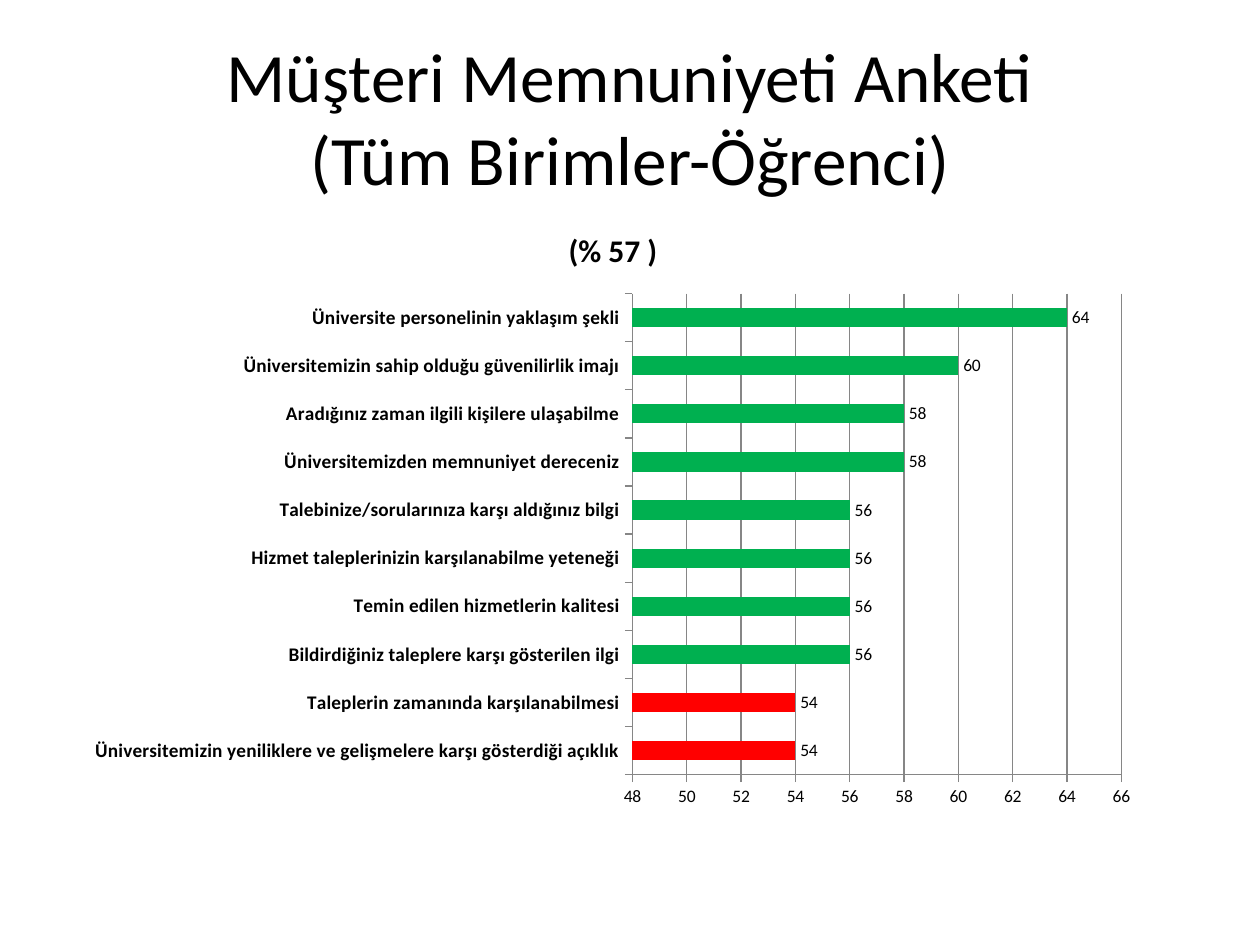
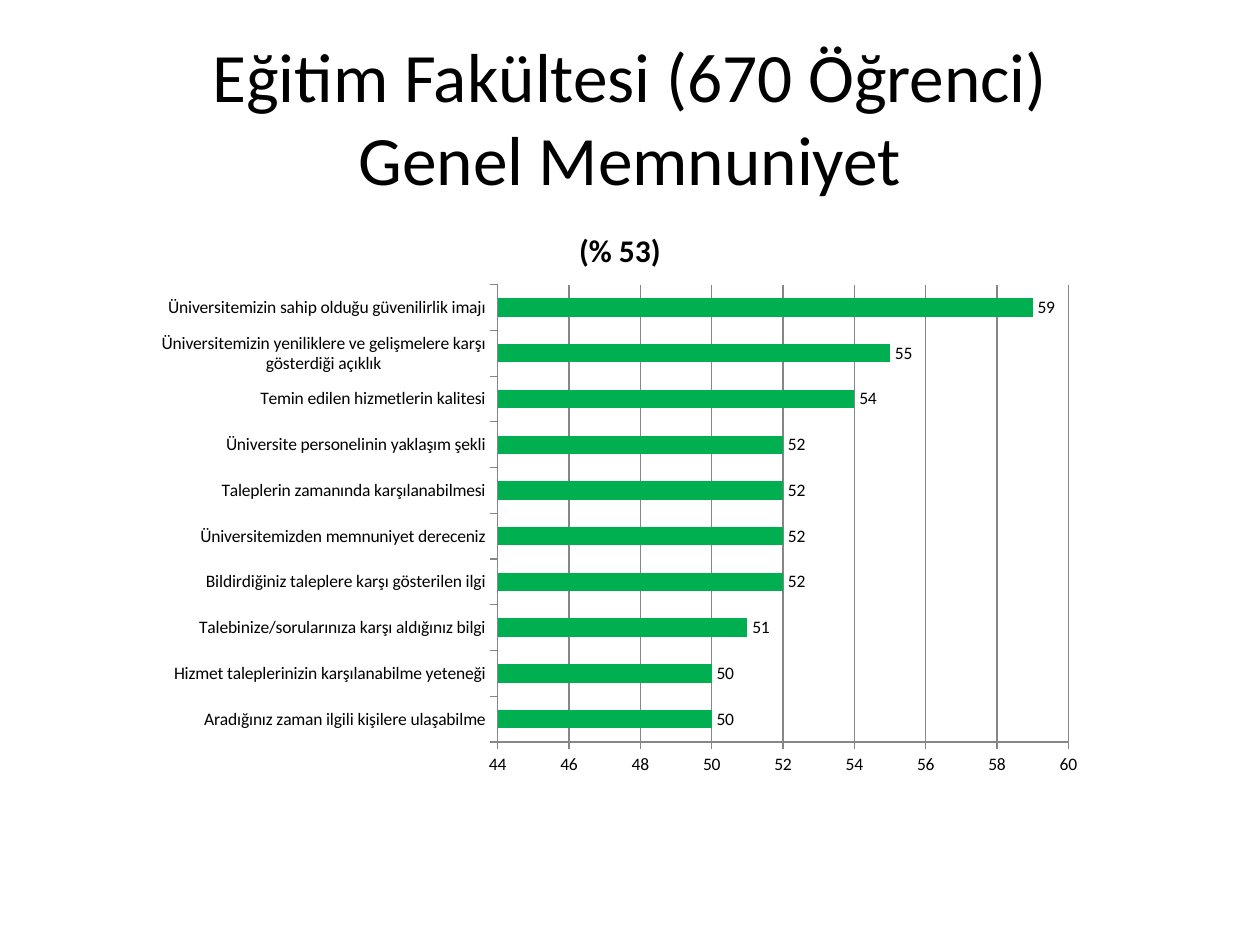
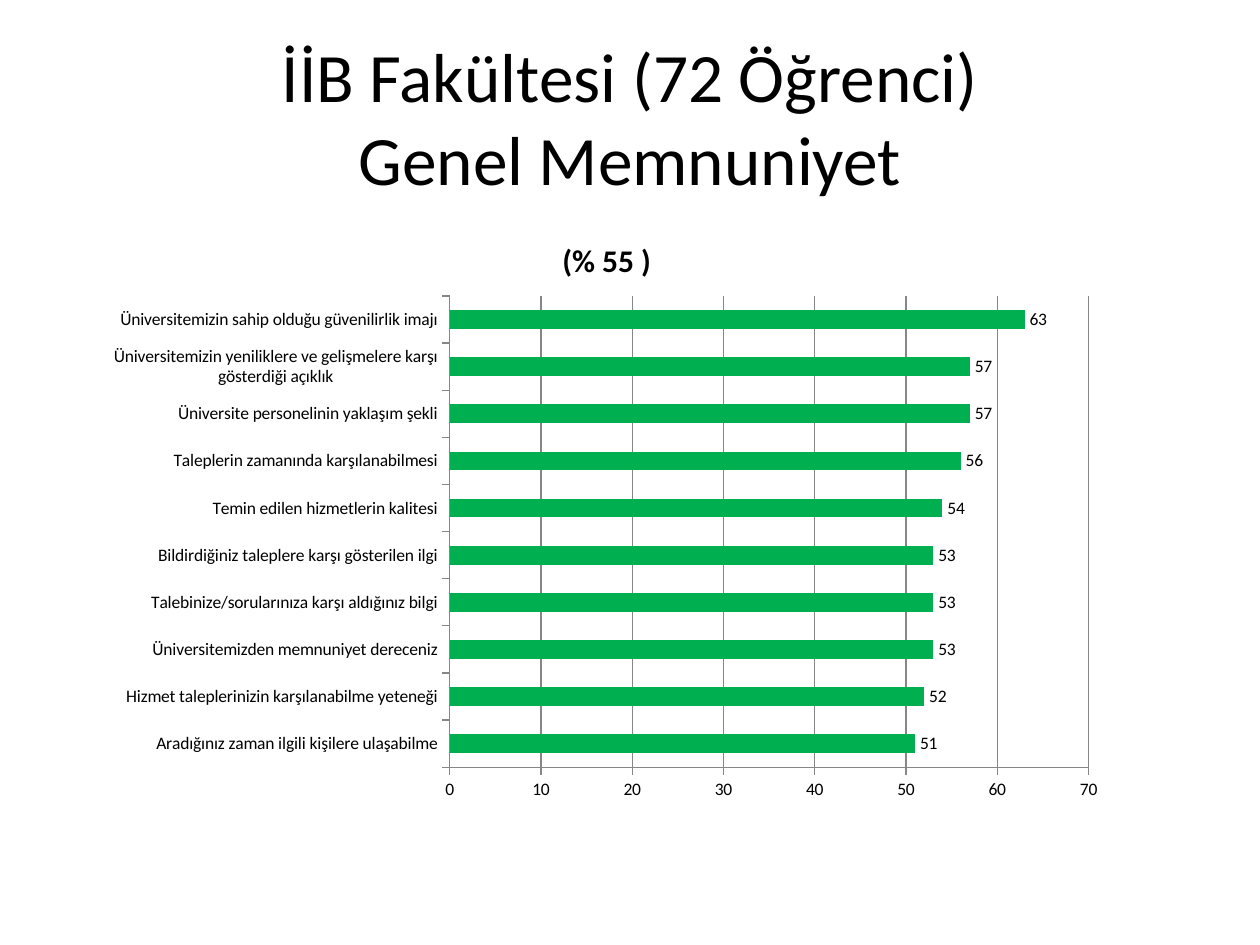
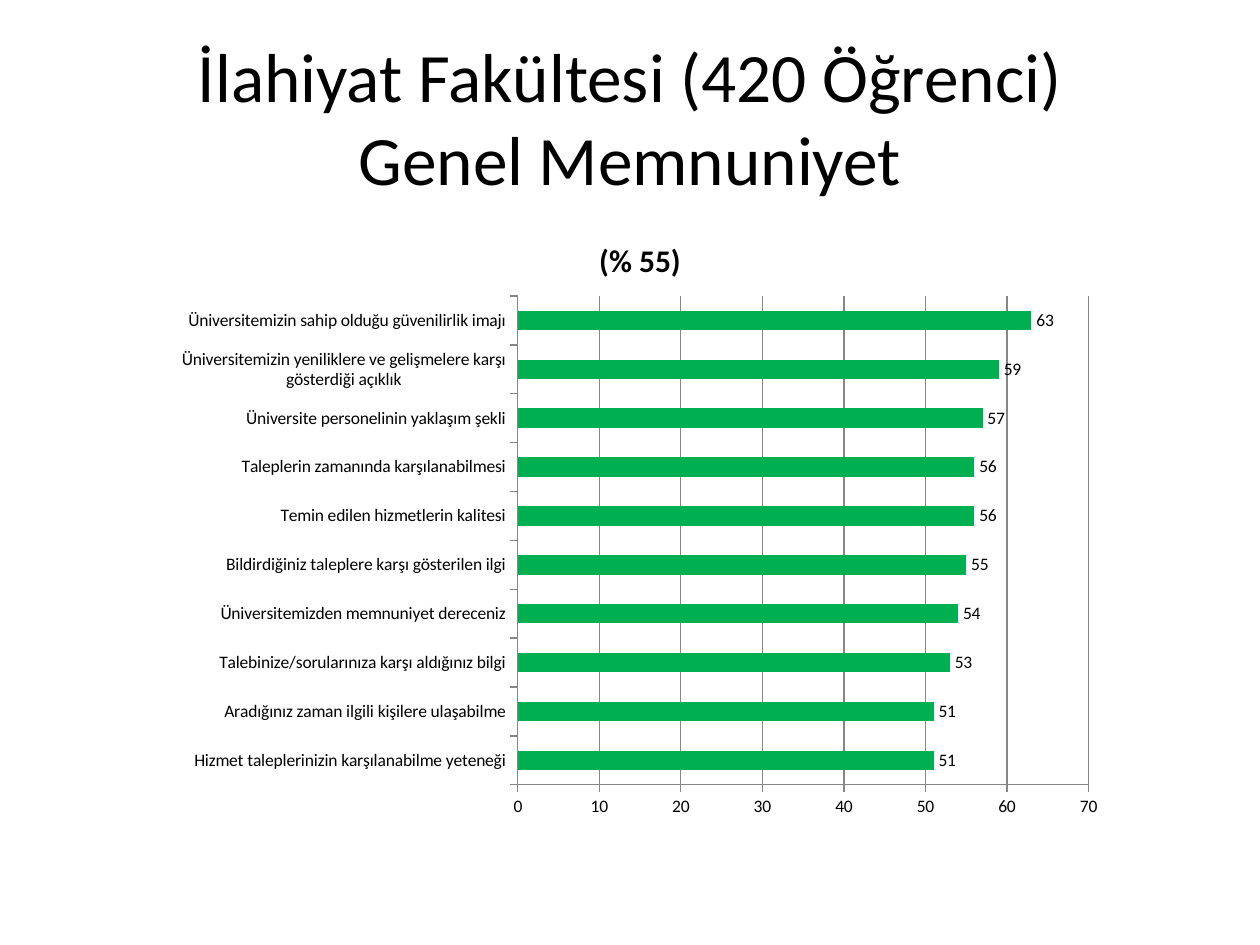
"""Build four slides of student satisfaction survey bar charts."""
from lxml import etree
from pptx import Presentation
from pptx.chart.data import CategoryChartData
from pptx.dml.color import RGBColor
from pptx.enum import chart as ch, text
from pptx.oxml import ns
from pptx.util import Inches, Pt

FONT = "Calibri"
BLACK = RGBColor(0x00, 0x00, 0x00)
GREEN = RGBColor(0x00, 0xB0, 0x50)
RED = RGBColor(0xFF, 0x00, 0x00)
GREY = RGBColor(0x86, 0x86, 0x86)

OPENNESS = "Üniversitemizin yeniliklere ve gelişmelere karşı gösterdiği açıklık"
ON_TIME = "Taleplerin zamanında karşılanabilmesi"
INTEREST = "Bildirdiğiniz taleplere karşı gösterilen ilgi"
QUALITY = "Temin edilen hizmetlerin kalitesi"
ABILITY = "Hizmet taleplerinizin karşılanabilme yeteneği"
INFORMATION = "Talebinize/sorularınıza karşı aldığınız bilgi"
OVERALL = "Üniversitemizden memnuniyet dereceniz"
ACCESS = "Aradığınız zaman ilgili kişilere ulaşabilme"
TRUST = "Üniversitemizin sahip olduğu güvenilirlik imajı"
STAFF = "Üniversite personelinin yaklaşım şekli"

SURVEYS = [
    dict(title=["Müşteri Memnuniyeti Anketi", "(Tüm Birimler-Öğrenci)"], score="(% 57 )",
         frame=(0.59, 1.62, 8.55, 4.88), plot=(5.02, 2.33, 3.88, 3.82), scale=(48, 66, 2),
         cats=[OPENNESS, ON_TIME, INTEREST, QUALITY, ABILITY,
               INFORMATION, OVERALL, ACCESS, TRUST, STAFF],
         vals=[54, 54, 56, 56, 56, 56, 58, 58, 60, 64],
         low_bars=2, cat_size=11, cat_bold=True),
    dict(title=["Eğitim Fakültesi (670 Öğrenci)", "Genel Memnuniyet"], score="(% 53)",
         frame=(1.14, 1.62, 7.56, 4.62), plot=(3.95, 2.26, 4.53, 3.63), scale=(44, 60, 2),
         cats=[ACCESS, ABILITY, INFORMATION, INTEREST, OVERALL,
               ON_TIME, STAFF, QUALITY, OPENNESS, TRUST],
         vals=[50, 50, 51, 52, 52, 52, 52, 54, 55, 59],
         low_bars=0, cat_size=10, cat_bold=False),
    dict(title=["İİB Fakültesi (72 Öğrenci)", "Genel Memnuniyet"], score="(% 55 )",
         frame=(0.75, 1.7, 8.13, 4.73), plot=(3.57, 2.35, 5.07, 3.74), scale=(0, 70, 10),
         cats=[ACCESS, ABILITY, OVERALL, INFORMATION, INTEREST,
               QUALITY, ON_TIME, STAFF, OPENNESS, TRUST],
         vals=[51, 52, 53, 53, 53, 54, 56, 57, 57, 63],
         low_bars=0, cat_size=10, cat_bold=False),
    dict(title=["İlahiyat Fakültesi (420 Öğrenci)", "Genel Memnuniyet"], score="(% 55)",
         frame=(1.3, 1.7, 7.56, 4.88), plot=(4.11, 2.35, 4.53, 3.88), scale=(0, 70, 10),
         cats=[ABILITY, ACCESS, INFORMATION, OVERALL, INTEREST,
               QUALITY, ON_TIME, STAFF, OPENNESS, TRUST],
         vals=[51, 51, 53, 54, 55, 56, 56, 57, 59, 63],
         low_bars=0, cat_size=10, cat_bold=False),
]


def set_font(font, size, bold=False):
    font.name = FONT
    font.size = Pt(size)
    font.bold = bold
    font.color.rgb = BLACK


def place_plot(chart, frame, plot):
    area = chart.element.find(".//" + ns.qn("c:plotArea"))
    for old in area.findall(ns.qn("c:layout")):
        area.remove(old)
    layout = etree.Element(ns.qn("c:layout"))
    manual = etree.SubElement(layout, ns.qn("c:manualLayout"))
    left, top, width, height = frame
    settings = [("layoutTarget", "inner"), ("xMode", "edge"), ("yMode", "edge"),
                ("x", (plot[0] - left) / width), ("y", (plot[1] - top) / height),
                ("w", plot[2] / width), ("h", plot[3] / height)]
    for tag, value in settings:
        etree.SubElement(manual, ns.qn("c:" + tag)).set("val", str(value))
    area.insert(0, layout)


prs = Presentation()
prs.slide_width, prs.slide_height = Inches(10), Inches(7.5)

for survey in SURVEYS:
    s = prs.slides.add_slide(prs.slide_layouts[6])

    tf = s.shapes.add_textbox(Inches(0.5), Inches(0.3), Inches(9), Inches(1.25)).text_frame
    tf.word_wrap = True
    tf.vertical_anchor = text.MSO_ANCHOR.MIDDLE
    p = tf.paragraphs[0]
    p.text = "\v".join(survey["title"])
    p.alignment = text.PP_ALIGN.CENTER
    set_font(p.font, 39.6)

    data = CategoryChartData(number_format="0")
    data.categories = survey["cats"]
    data.add_series("Series 1", survey["vals"])
    frame = [Inches(n) for n in survey["frame"]]
    chart = s.shapes.add_chart(ch.XL_CHART_TYPE.BAR_CLUSTERED, *frame, data).chart
    set_font(chart.font, 10)
    chart.has_legend = False
    chart.has_title = True
    chart.chart_title.include_in_layout = False
    p = chart.chart_title.text_frame.paragraphs[0]
    p.text = survey["score"]
    set_font(p.font, 18, True)
    place_plot(chart, survey["frame"], survey["plot"])

    bars = chart.plots[0]
    bars.gap_width = 150
    bars.vary_by_categories = False
    series = bars.series[0]
    series.format.fill.solid()
    series.format.fill.fore_color.rgb = GREEN
    for i in range(survey["low_bars"]):
        fill = series.points[i].format.fill
        fill.solid()
        fill.fore_color.rgb = RED
    bars.has_data_labels = True
    labels = bars.data_labels
    labels.show_value = True
    labels.number_format = "0"
    labels.number_format_is_linked = False
    labels.position = ch.XL_LABEL_POSITION.OUTSIDE_END
    set_font(labels.font, 10)

    cat_axis, val_axis = chart.category_axis, chart.value_axis
    set_font(cat_axis.tick_labels.font, survey["cat_size"], survey["cat_bold"])
    set_font(val_axis.tick_labels.font, 10)
    val_axis.tick_labels.number_format = "0"
    val_axis.tick_labels.number_format_is_linked = False
    val_axis.minimum_scale, val_axis.maximum_scale, val_axis.major_unit = survey["scale"]
    val_axis.has_major_gridlines = True
    cat_axis.has_major_gridlines = False
    for axis in (cat_axis, val_axis):
        axis.major_tick_mark = ch.XL_TICK_MARK.OUTSIDE
        axis.minor_tick_mark = ch.XL_TICK_MARK.NONE
    for part in (cat_axis, val_axis, val_axis.major_gridlines):
        part.format.line.color.rgb = GREY
        part.format.line.width = Pt(0.75)

prs.save("out.pptx")
